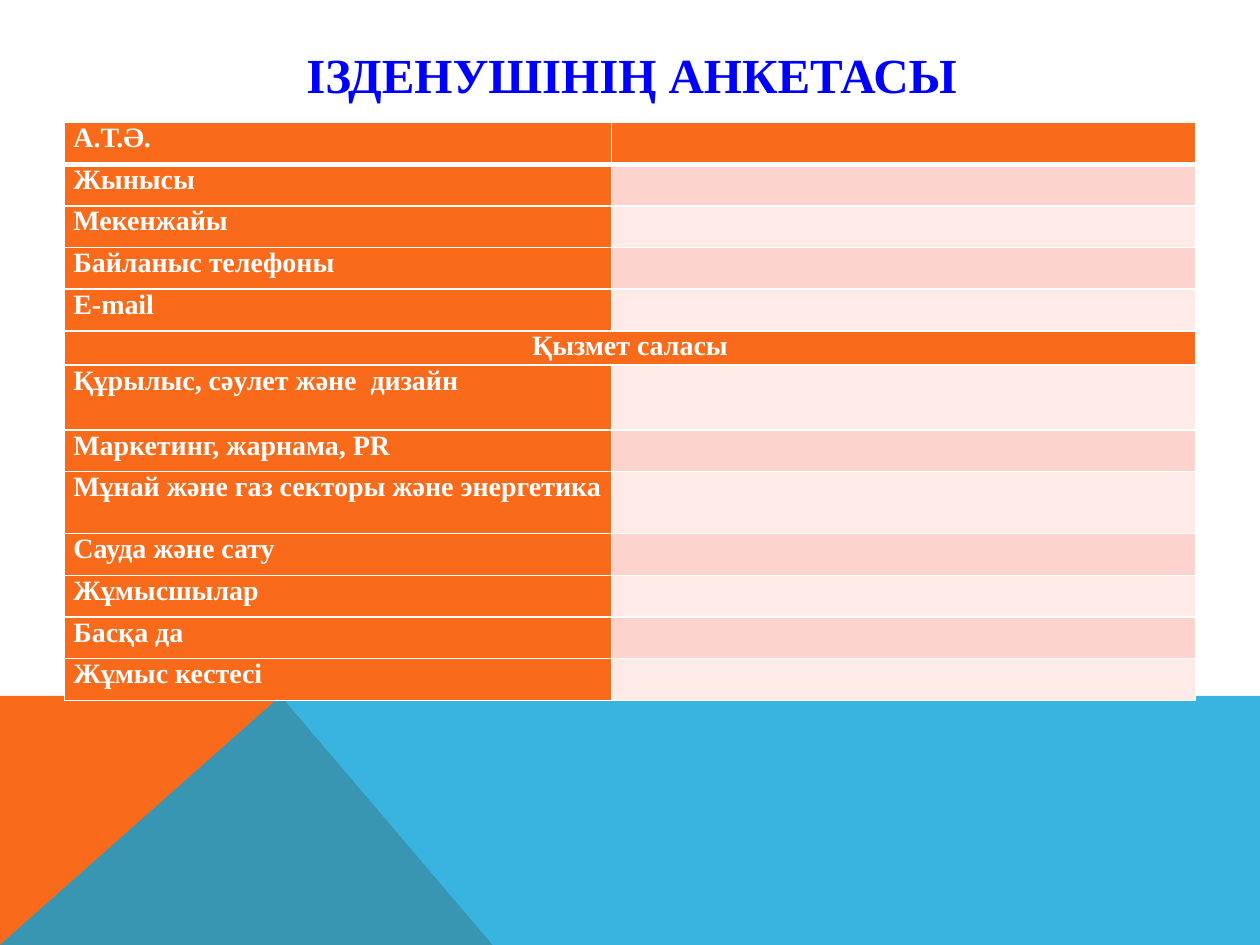
import pptx
import pptx.dml.color
import pptx.enum.text
import pptx.oxml
import pptx.oxml.ns
import pptx.util
from lxml import etree

Cm = pptx.util.Cm
RGBColor = pptx.dml.color.RGBColor
ALIGN = pptx.enum.text.PP_ALIGN
ANCHOR = pptx.enum.text.MSO_ANCHOR

ORANGE = RGBColor(0xF9, 0x6A, 0x1B)
SKY = RGBColor(0x08, 0xA1, 0xD9)
BLUE = RGBColor(0x00, 0x00, 0xFF)
WHITE = RGBColor(0xFF, 0xFF, 0xFF)
PINK = RGBColor(0xFD, 0xD4, 0xCD)
PALE = RGBColor(0xFE, 0xEB, 0xE8)

ROW = 0.84
FIELDS = [
    ("А.Т.Ә.", ROW),
    ("Жынысы", ROW),
    ("Мекенжайы", ROW),
    ("Байланыс телефоны", ROW),
    ("E-mail", ROW),
    ("Қызмет саласы", 0.69),
    ("Құрылыс, сәулет және  дизайн", 1.31),
    ("Маркетинг, жарнама, PR", ROW),
    ("Мұнай және газ секторы және энергетика", 1.25),
    ("Сауда және сату", ROW),
    ("Жұмысшылар", ROW),
    ("Басқа да", ROW),
    ("Жұмыс кестесі", ROW),
]
SECTION_ROW = 5


def write(tf, text, size=16, color=WHITE, align=ALIGN.LEFT):
    """Write one bold paragraph into a text frame."""
    p = tf.paragraphs[0]
    p.alignment = align
    r = p.add_run()
    r.text = text
    r.font.name = "Times New Roman"
    r.font.size = pptx.util.Pt(size)
    r.font.bold = True
    r.font.color.rgb = color


def add_polygon(s, points, color, alpha=None):
    """Draw a filled outline through points given in centimetres."""
    corners = [(Cm(x), Cm(y)) for x, y in points]
    builder = s.shapes.build_freeform(*corners[0], scale=1.0)
    builder.add_line_segments(corners[1:], close=True)
    sp = builder.convert_to_shape()
    sp.shadow.inherit = False
    sp.line.fill.background()
    sp.fill.solid()
    sp.fill.fore_color.rgb = color
    if alpha is not None:
        clr = sp.fill._xPr.find(".//" + pptx.oxml.ns.qn("a:srgbClr"))
        etree.SubElement(clr, pptx.oxml.ns.qn("a:alpha"), val=str(alpha * 1000))


def add_footer(s, left, top, width, height):
    """Draw the two overlapping bands at the foot of the slide."""
    peak, foot = left + 5.66, left + 9.93
    right, bottom = left + width, top + height
    add_polygon(s, [(left, bottom), (left, top), (peak, top), (foot, bottom)], ORANGE)
    add_polygon(s, [(left, bottom), (peak, top), (right, top), (right, bottom)],
                SKY, alpha=80)


def add_title(s, left, top, width, height):
    """Place the centred heading."""
    tf = s.shapes.add_textbox(Cm(left), Cm(top), Cm(width), Cm(height)).text_frame
    tf.word_wrap = True
    tf.vertical_anchor = ANCHOR.MIDDLE
    write(tf, "ІЗДЕНУШІНІҢ АНКЕТАСЫ", size=28, color=BLUE, align=ALIGN.CENTER)


def format_cell(cell, color, bottom=1, top=1):
    """Set the fill, margins and white borders of a cell."""
    cell.margin_left = cell.margin_right = Cm(0.18)
    cell.margin_top = cell.margin_bottom = 0
    tcPr = cell._tc.get_or_add_tcPr()
    for side, width in zip("LRTB", (1, 1, top, bottom)):
        tcPr.append(pptx.oxml.parse_xml(
            f'<a:ln{side} {pptx.oxml.ns.nsdecls("a")} w="{pptx.util.Pt(width)}">'
            f'<a:solidFill><a:srgbClr val="{WHITE}"/></a:solidFill></a:ln{side}>'))
    cell.fill.solid()
    cell.fill.fore_color.rgb = color


def add_form(s, left, top, width):
    """Build the form table with labels on the left and empty fields on the right."""
    height = sum(h for _, h in FIELDS)
    table = s.shapes.add_table(len(FIELDS), 2, Cm(left), Cm(top),
                               Cm(width), Cm(height)).table
    table.first_row = table.horz_banding = False
    label_width = 11.03
    table.columns[0].width = Cm(label_width)
    table.columns[1].width = Cm(width - label_width)
    for i, (text, row_height) in enumerate(FIELDS):
        table.rows[i].height = Cm(row_height)
        label, field = table.cell(i, 0), table.cell(i, 1)
        edges = {"bottom": 3 if i == 0 else 1, "top": 3 if i == 1 else 1}
        format_cell(label, ORANGE, **edges)
        format_cell(field, ORANGE if i == 0 else PINK if i % 2 else PALE, **edges)
        field.text_frame.paragraphs[0].font.size = pptx.util.Pt(12)
        is_section = i == SECTION_ROW
        if is_section:
            label.merge(field)
        write(label.text_frame, text, align=ALIGN.CENTER if is_section else ALIGN.LEFT)


def main():
    """Build the slide and save it."""
    prs = pptx.Presentation()
    prs.slide_width, prs.slide_height = Cm(25.4), Cm(19.05)
    s = prs.slides.add_slide(prs.slide_layouts[6])
    add_footer(s, 0, 14.03, 25.4, 5.02)
    add_title(s, 2.29, 0.74, 20.88, 1.52)
    add_form(s, 1.3, 2.47, 22.8)
    prs.save("out.pptx")


if __name__ == "__main__":
    main()
